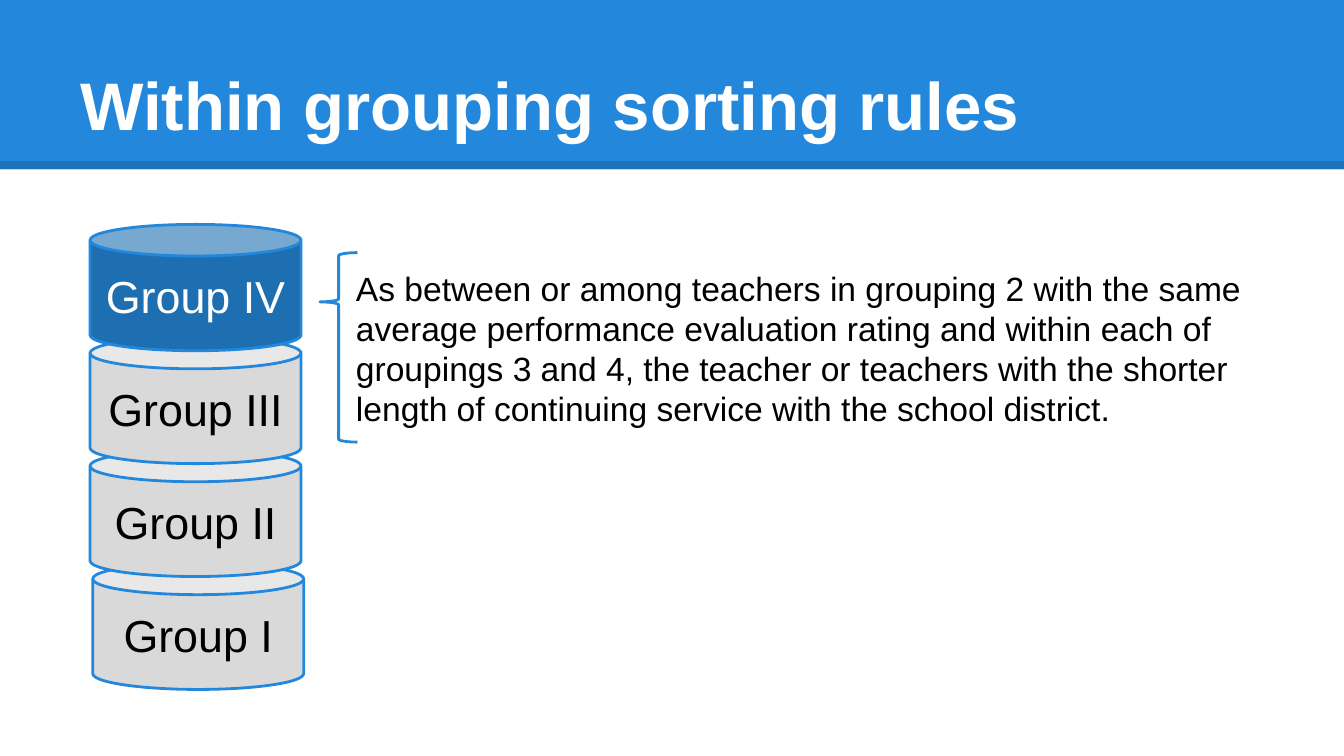
from pptx import Presentation
from pptx.dml.color import RGBColor
from pptx.enum import shapes, text
from pptx.oxml import parse_xml
from pptx.oxml.ns import nsdecls, qn
from pptx.util import Inches, Pt

BLUE, DARK_BLUE, BLACK, WHITE, GRAY = "2388DB", "1D6FB2", "000000", "FFFFFF", "D9D9D9"
TITLE = "Within grouping sorting rules"
RULE = (
    "As between or among teachers in grouping 2 with the same average performance "
    "evaluation rating and within each of groupings 3 and 4, the teacher or teachers "
    "with the shorter length of continuing service with the school district."
)
GROUPS = [
    ("Group I", 0.69, BLACK, 15, BLACK),
    ("Group II", 0.67, GRAY, 100, BLACK),
    ("Group III", 0.67, GRAY, 100, BLACK),
    ("Group IV", 0.67, DARK_BLUE, 100, WHITE),
]
SLIDE_WIDTH = Inches(10)
SLIDE_HEIGHT = SLIDE_WIDTH * 9 // 16
BOTTOM_CAN_TOP, CAN_STEP, CAN_WIDTH, CAN_HEIGHT = 4.19, 0.84, 1.57, 0.94
RULE_TOP, RULE_HEIGHT = 1.88, 1.41


def paint(color_format, color, opacity=100):
    """Set a colour, with opacity in percent."""
    color_format.rgb = RGBColor.from_string(color)
    if opacity < 100:
        element = color_format._xFill.find(qn("a:srgbClr"))
        element.append(parse_xml(f'<a:alpha {nsdecls("a")} val="{opacity * 1000}"/>'))


def add_shape(slide, kind, box, fill=None, opacity=100, line=None):
    """Add a flat preset shape with an optional fill and outline."""
    shape = slide.shapes.add_shape(kind, *map(Inches, box))
    shape.shadow.inherit = False
    if fill:
        shape.fill.solid()
        paint(shape.fill.fore_color, fill, opacity)
    else:
        shape.fill.background()
    if line:
        paint(shape.line.color, line)
        shape.line.width = Pt(1.5)
    else:
        shape.line.fill.background()
    return shape


def write(shape, words, size, color, anchor, align, bold=False):
    """Put one formatted paragraph in a shape."""
    frame = shape.text_frame
    frame.text = words
    frame.word_wrap = True
    frame.vertical_anchor = anchor
    frame.margin_left = frame.margin_right = Inches(0.1)
    frame.margin_top = frame.margin_bottom = Inches(0.1)
    paragraph = frame.paragraphs[0]
    paragraph.alignment = align
    font = paragraph.runs[0].font
    font.name, font.size, font.bold = "Arial", Pt(size), bold
    paint(font.color, color)


def main():
    """Build and save the slide."""
    presentation = Presentation()
    presentation.slide_width, presentation.slide_height = SLIDE_WIDTH, SLIDE_HEIGHT
    slide = presentation.slides.add_slide(presentation.slide_layouts[6])
    kinds, anchors, aligns = shapes.MSO_SHAPE, text.MSO_ANCHOR, text.PP_ALIGN

    add_shape(slide, kinds.RECTANGLE, (0, 0, 10, 1.26), BLUE)
    edge = slide.shapes.add_connector(
        shapes.MSO_CONNECTOR.STRAIGHT, 0, Inches(1.23), SLIDE_WIDTH, Inches(1.23)
    )
    edge.line.width = Pt(4.5)
    edge.line.fill.solid()
    paint(edge.line.color, BLACK, 15)
    edge._element.spPr.append(parse_xml(f'<a:effectLst {nsdecls("a")}/>'))

    rule = slide.shapes.add_textbox(*map(Inches, (2.55, RULE_TOP, 7.15, RULE_HEIGHT)))
    write(rule, RULE, 18, BLACK, anchors.BOTTOM, aligns.LEFT)

    for index, (name, left, fill, opacity, color) in enumerate(GROUPS):
        top = BOTTOM_CAN_TOP - index * CAN_STEP
        box = (left, top, CAN_WIDTH, CAN_HEIGHT)
        can = add_shape(slide, kinds.CAN, box, fill, opacity, BLUE)
        can.adjustments[0] = 0.25
        write(can, name, 24, color, anchors.MIDDLE, aligns.CENTER)

    brace = add_shape(slide, kinds.LEFT_BRACE, (2.38, RULE_TOP, 0.28, RULE_HEIGHT), line=BLUE)
    brace.adjustments[0], brace.adjustments[1] = 0.08, 0.26

    title = slide.shapes.add_textbox(*map(Inches, (0.5, 0.23, 9, 0.94)))
    write(title, TITLE, 36, WHITE, anchors.BOTTOM, aligns.LEFT, bold=True)

    presentation.save("out.pptx")


if __name__ == "__main__":
    main()
